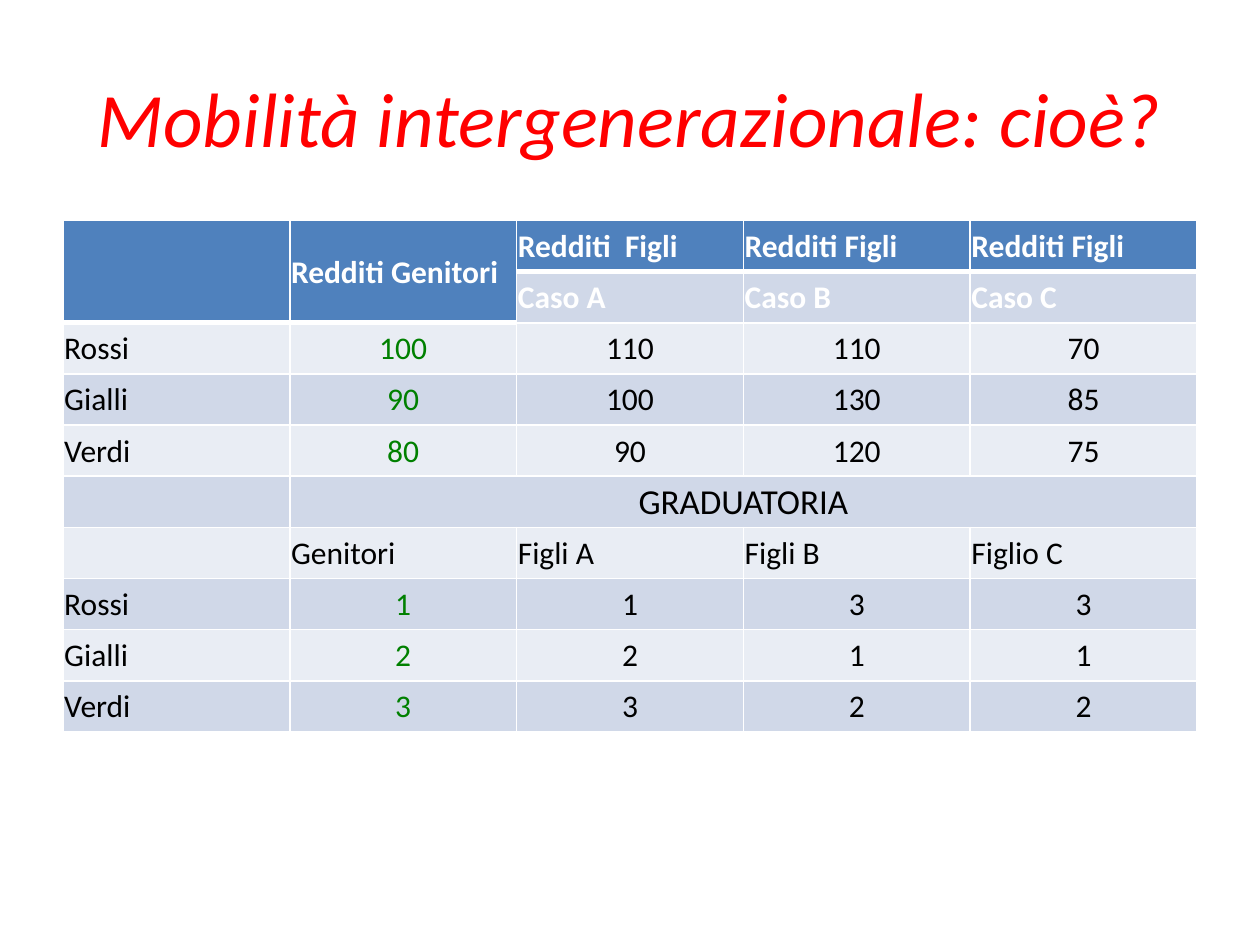
from dataclasses import dataclass

from lxml.etree import SubElement
from pptx import Presentation
from pptx.dml.color import RGBColor
from pptx.enum.text import MSO_ANCHOR, PP_ALIGN
from pptx.oxml.ns import qn
from pptx.util import Inches, Pt


@dataclass(frozen=True)
class Theme:
    font: str = "Calibri"
    title: str = "FF0000"
    header: str = "4F81BD"
    light_band: str = "E9EDF4"
    dark_band: str = "D0D8E8"
    white: str = "FFFFFF"
    ink: str = "000000"
    parents: str = "008000"
    title_size: int = 44
    ranking_size: int = 20
    cell_size: int = 18
    thin: int = 1
    thick: int = 3


THEME = Theme()
RANKING = "GRADUATORIA"
INCOMES = [
    ["", "Redditi Genitori", "Redditi  Figli", "Redditi Figli", "Redditi Figli"],
    ["", "", "Caso A", "Caso B", "Caso C"],
    ["Rossi", "100", "110", "110", "70"],
    ["Gialli", "90", "100", "130", "85"],
    ["Verdi", "80", "90", "120", "75"],
    ["", RANKING, "", "", ""],
    ["", "Genitori", "Figli A", "Figli B", "Figlio C"],
    ["Rossi", "1", "1", "3", "3"],
    ["Gialli", "2", "2", "1", "1"],
    ["Verdi", "3", "3", "2", "2"],
]


def set_borders(cell, widths):
    """Draw white borders; widths are points for left, right, top, bottom."""
    properties = cell._tc.get_or_add_tcPr()
    for side, width in zip("LRTB", widths):
        line = SubElement(properties, qn(f"a:ln{side}"), w=str(Pt(width)))
        fill = SubElement(line, qn("a:solidFill"))
        SubElement(fill, qn("a:srgbClr"), val=THEME.white)


def format_cell(cell, text, row, column):
    # The first two columns have a header two rows deep
    header_depth = 2 if column < 2 else 1
    in_header = row < header_depth
    top = THEME.thick if row == header_depth else THEME.thin
    bottom = THEME.thick if in_header else THEME.thin
    set_borders(cell, (THEME.thin, THEME.thin, top, bottom))

    band = THEME.dark_band if row % 2 else THEME.light_band
    cell.fill.solid()
    cell.fill.fore_color.rgb = RGBColor.from_string(THEME.header if in_header else band)

    cell.vertical_anchor = MSO_ANCHOR.MIDDLE
    cell.margin_left = cell.margin_right = cell.margin_top = Inches(0.01)
    cell.margin_bottom = 0

    # Numbers and the ranking heading are centred, labels stay left
    is_number = text.isdigit()
    is_ranking = text == RANKING
    cell.text = text
    paragraph = cell.text_frame.paragraphs[0]
    paragraph.alignment = PP_ALIGN.CENTER if is_number or is_ranking else PP_ALIGN.LEFT
    font = paragraph.font
    font.name = THEME.font
    font.size = Pt(THEME.ranking_size if is_ranking else THEME.cell_size)
    font.bold = row < 2
    if row < 2:
        color = THEME.white
    elif is_number and column == 1:
        color = THEME.parents
    else:
        color = THEME.ink
    font.color.rgb = RGBColor.from_string(color)


def place_title(slide, text, left, top, width, height):
    title = slide.shapes.title
    title.left, title.top, title.width, title.height = left, top, width, height
    title.text_frame.text = text
    title.text_frame.vertical_anchor = MSO_ANCHOR.MIDDLE
    paragraph = title.text_frame.paragraphs[0]
    paragraph.alignment = PP_ALIGN.CENTER
    paragraph.font.name = THEME.font
    paragraph.font.size = Pt(THEME.title_size)
    paragraph.font.italic = True
    paragraph.font.color.rgb = RGBColor.from_string(THEME.title)


def place_income_table(slide, rows, left, top, width, height):
    frame = slide.shapes.add_table(len(rows), len(rows[0]), left, top, width, height)
    table = frame.table
    for row, texts in enumerate(rows):
        for column, text in enumerate(texts):
            format_cell(table.cell(row, column), text, row, column)

    # Two-row headers and the ranking heading across the four value columns
    for column in (0, 1):
        table.cell(0, column).merge(table.cell(1, column))
    table.cell(5, 1).merge(table.cell(5, 4))


def main():
    presentation = Presentation()
    presentation.slide_width, presentation.slide_height = Inches(10), Inches(7.5)
    slide = presentation.slides.add_slide(presentation.slide_layouts[5])
    left, width = Inches(0.5), Inches(9)
    place_title(slide, "Mobilità intergenerazionale: cioè?",
                left, Inches(0.3), width, Inches(1.25))
    place_income_table(slide, INCOMES, left, Inches(1.75), width, Inches(4.06))
    presentation.save("out.pptx")


if __name__ == "__main__":
    main()
